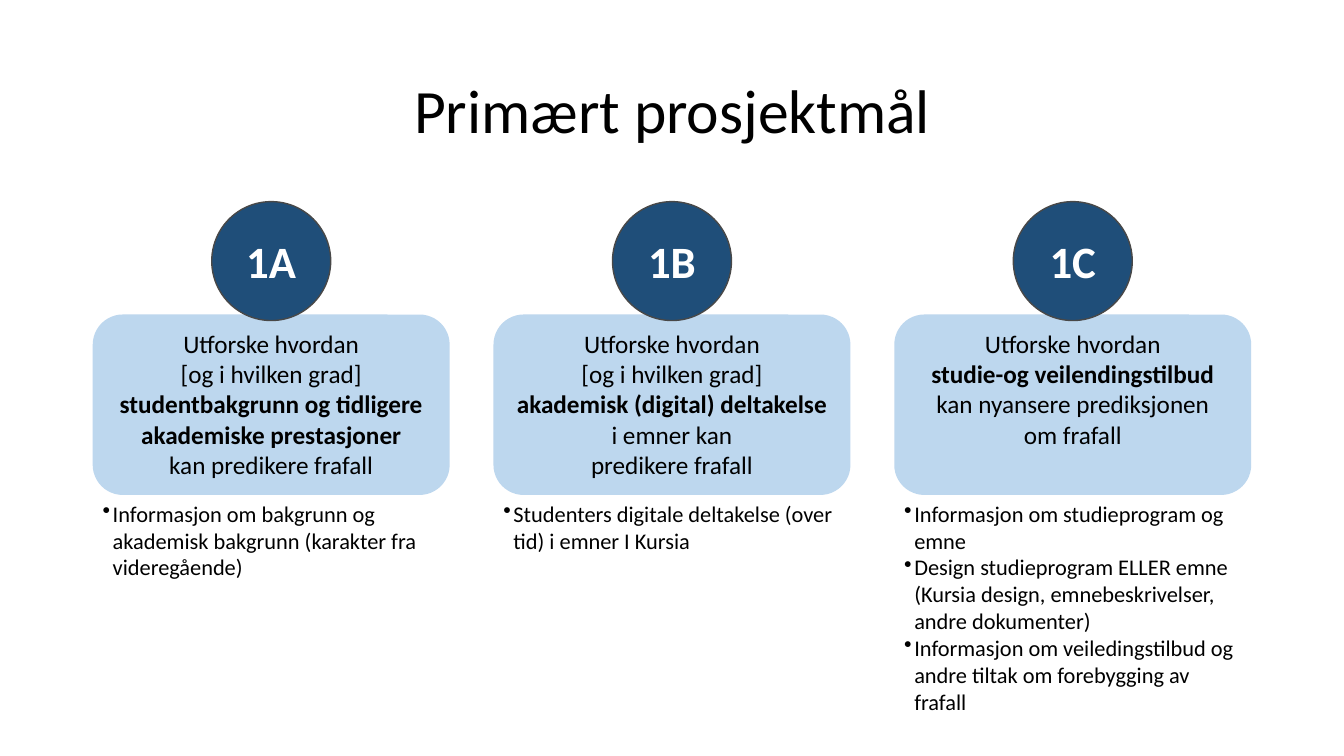
from pptx import Presentation
from pptx.dml.color import RGBColor
from pptx.enum.shapes import MSO_SHAPE
from pptx.enum.text import MSO_ANCHOR, PP_ALIGN
from pptx.util import Inches, Pt
from lxml.etree import SubElement
from pptx.oxml.ns import qn

FIRST_LEFT, LAST_LEFT = 0.92, 8.87
COLUMN_WIDTH = 3.54
CIRCLE_TOP, CIRCLE_SIZE = 2, 1.18
GOAL_TOP, GOAL_HEIGHT = 3.12, 1.79

GOALS = [
    {
        "label": "1A",
        "spans": [
            ("Utforske hvordan\n[og i hvilken grad] ", False),
            ("studentbakgrunn og tidligere akademiske prestasjoner\n", True),
            ("kan predikere frafall", False),
        ],
        "sources": ["Informasjon om bakgrunn og akademisk bakgrunn (karakter fra videregående)"],
        "sources_height": 1.25,
    },
    {
        "label": "1B",
        "spans": [
            ("Utforske hvordan\n[og i hvilken grad]\n", False),
            ("akademisk (digital) deltakelse\n", True),
            ("i emner kan\npredikere frafall", False),
        ],
        "sources": ["Studenters digitale deltakelse (over tid) i emner I Kursia"],
        "sources_height": 0.98,
    },
    {
        "label": "1C",
        "spans": [
            ("Utforske hvordan\n", False),
            ("studie-og veilendingstilbud\n", True),
            ("kan nyansere prediksjonen\nom frafall", False),
        ],
        "sources": [
            "Informasjon om studieprogram og emne",
            "Design studieprogram ELLER emne (Kursia design, emnebeskrivelser, andre dokumenter)",
            "Informasjon om veiledingstilbud og andre tiltak om forebygging av frafall",
        ],
        "sources_height": 2.5,
    },
]


def color(value):
    return RGBColor.from_string(value)


def add_span(para, text, size, ink="000000", bold=False):
    for index, line in enumerate(text.split("\n")):
        if index:
            para.add_line_break()
        if line:
            span = para.add_run()
            span.text = line
            formats = {"name": "Calibri", "size": Pt(size), "bold": bold}
            for name, value in formats.items():
                setattr(span.font, name, value)
            span.font.color.rgb = color(ink)


def add_filled(page, kind, box, fill, anchor):
    shape = page.shapes.add_shape(kind, *map(Inches, box))
    shape.shadow.inherit = False
    shape.fill.solid()
    shape.fill.fore_color.rgb = color(fill)
    shape.line.fill.background()
    shape.text_frame.word_wrap = True
    shape.text_frame.vertical_anchor = anchor
    shape.text_frame.paragraphs[0].alignment = PP_ALIGN.CENTER
    return shape


def add_title(page, box, text):
    frame = page.shapes.add_textbox(*map(Inches, box)).text_frame
    frame.word_wrap = True
    frame.vertical_anchor = MSO_ANCHOR.MIDDLE
    para = frame.paragraphs[0]
    para.alignment = PP_ALIGN.CENTER
    para.line_spacing = 0.9
    add_span(para, text, 44)


def add_circle(page, box, label):
    circle = add_filled(page, MSO_SHAPE.OVAL, box, "1F4E79", MSO_ANCHOR.MIDDLE)
    circle.line.color.rgb = color("484848")
    circle.line.width = Pt(1)
    add_span(circle.text_frame.paragraphs[0], label, 32, "FFFFFF", True)


def add_goal(page, box, spans):
    goal = add_filled(page, MSO_SHAPE.ROUNDED_RECTANGLE, box, "BDD7EE", MSO_ANCHOR.TOP)
    for text, bold in spans:
        add_span(goal.text_frame.paragraphs[0], text, 18, bold=bold)


def add_sources(page, box, sources):
    frame = page.shapes.add_textbox(*map(Inches, box)).text_frame
    frame.word_wrap = True
    for index, source in enumerate(sources):
        para = frame.add_paragraph() if index else frame.paragraphs[0]
        properties = para._p.get_or_add_pPr()
        properties.set("marL", str(Inches(0.1)))
        properties.set("indent", str(Inches(-0.1)))
        SubElement(properties, qn("a:buChar")).set("char", "•")
        add_span(para, source, 16)


def add_column(page, left, goal):
    circle_left = left + (COLUMN_WIDTH - CIRCLE_SIZE) / 2
    sources_top = GOAL_TOP + GOAL_HEIGHT
    add_goal(page, (left, GOAL_TOP, COLUMN_WIDTH, GOAL_HEIGHT), goal["spans"])
    add_circle(page, (circle_left, CIRCLE_TOP, CIRCLE_SIZE, CIRCLE_SIZE), goal["label"])
    add_sources(page, (left, sources_top, COLUMN_WIDTH, goal["sources_height"]), goal["sources"])


def main():
    deck = Presentation()
    deck.slide_width = Inches(13.33)
    deck.slide_height = Inches(7.5)
    page = deck.slides.add_slide(deck.slide_layouts[6])
    add_title(page, (FIRST_LEFT, 0.4, 11.5, 1.45), "Primært prosjektmål")
    pitch = (LAST_LEFT - FIRST_LEFT) / (len(GOALS) - 1)
    for index, goal in enumerate(GOALS):
        add_column(page, FIRST_LEFT + index * pitch, goal)
    deck.save("out.pptx")


if __name__ == "__main__":
    main()
